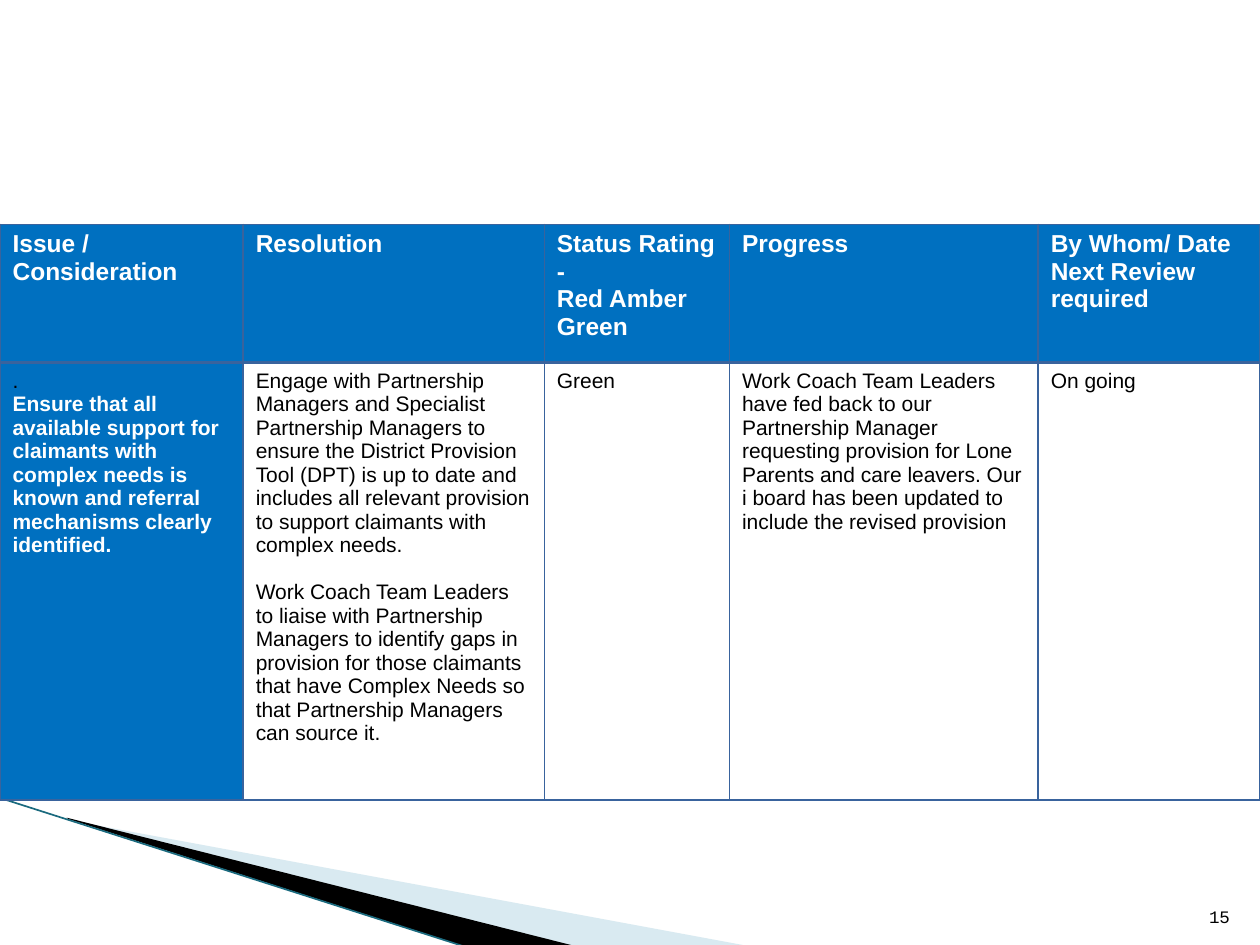
from dataclasses import dataclass

from lxml import etree
from pptx import Presentation
from pptx.dml.color import RGBColor
from pptx.enum.shapes import MSO_CONNECTOR
from pptx.enum.text import MSO_ANCHOR, PP_ALIGN
from pptx.oxml.ns import qn
from pptx.util import Inches, Pt

STRAIGHT = MSO_CONNECTOR.STRAIGHT
BOTTOM = MSO_ANCHOR.BOTTOM
RIGHT = PP_ALIGN.RIGHT


@dataclass(frozen=True)
class Theme:
    blue: str = "0070C0"
    border: str = "39639D"
    pale: str = "A0CBDC"
    teal: str = "1A6A7E"
    black: str = "000000"
    white: str = "FFFFFF"
    font: str = "Arial"
    number_font: str = "Courier New"
    header_size: float = 14
    body_size: float = 12
    number_size: float = 10
    paragraph_gap: float = 13.4


class SlideBuilder:
    def __init__(self, slide, theme):
        self.slide = slide
        self.theme = theme

    def add_run(self, paragraph, text, size, color, bold=False, font=None):
        run = paragraph.add_run()
        run.text = text
        run.font.name = font or self.theme.font
        run.font.size = Pt(size)
        run.font.bold = bold
        run.font.color.rgb = RGBColor.from_string(color)

    def add_wedge(self, points, color, opacity=None):
        corners = [(Inches(x), Inches(y)) for x, y in points]
        builder = self.slide.shapes.build_freeform(*corners[0], scale=1.0)
        builder.add_line_segments(corners[1:], close=True)
        wedge = builder.convert_to_shape()
        wedge.shadow.inherit = False
        wedge.line.fill.background()
        wedge.fill.solid()
        wedge.fill.fore_color.rgb = RGBColor.from_string(color)
        if opacity is not None:
            fill_color = wedge.fill._xPr.find(qn("a:solidFill"))[0]
            etree.SubElement(fill_color, qn("a:alpha"), val=str(opacity * 1000))

    def add_line(self, start, end, color, width):
        edge = self.slide.shapes.add_connector(
            STRAIGHT, *(Inches(value) for value in (*start, *end)))
        edge.line.color.rgb = RGBColor.from_string(color)
        edge.line.width = Pt(width)
        etree.SubElement(edge._element.spPr, qn("a:effectLst"))

    def add_page_number(self, text, left, top, width, height):
        box = self.slide.shapes.add_textbox(
            Inches(left), Inches(top), Inches(width), Inches(height))
        frame = box.text_frame
        frame.word_wrap = True
        frame.vertical_anchor = BOTTOM
        paragraph = frame.paragraphs[0]
        paragraph.alignment = RIGHT
        self.add_run(paragraph, text, self.theme.number_size,
                     self.theme.black, font=self.theme.number_font)

    def add_borders(self, cell, widths):
        properties = cell._tc.get_or_add_tcPr()
        for side, width in widths.items():
            line = etree.SubElement(properties, qn(f"a:ln{side}"), w=str(Pt(width)))
            fill = etree.SubElement(line, qn("a:solidFill"))
            etree.SubElement(fill, qn("a:srgbClr"), val=self.theme.border)

    def fill_cell(self, cell, paragraphs, size, color, bold, fill, borders):
        self.add_borders(cell, borders)
        if fill:
            cell.fill.solid()
            cell.fill.fore_color.rgb = RGBColor.from_string(fill)
        else:
            cell.fill.background()
        frame = cell.text_frame
        for index, text in enumerate(paragraphs):
            paragraph = frame.add_paragraph() if index else frame.paragraphs[0]
            if index:
                paragraph.space_before = Pt(self.theme.paragraph_gap)
            for number, line in enumerate(text.split("\n")):
                if number:
                    paragraph.add_line_break()
                self.add_run(paragraph, line, size, color, bold)

    def add_action_table(self, left, top, widths, heights, headings, actions):
        theme = self.theme
        table = self.slide.shapes.add_table(
            len(heights), len(widths), Inches(left), Inches(top),
            Inches(sum(widths)), Inches(sum(heights))).table
        table.first_row = False
        table.horz_banding = False
        for column, width in zip(table.columns, widths):
            column.width = Inches(width)
        for row, height in zip(table.rows, heights):
            row.height = Inches(height)
        for column, heading in enumerate(headings):
            self.fill_cell(table.cell(0, column), [heading], theme.header_size,
                           theme.white, True, theme.blue,
                           {"L": 1, "R": 1, "T": 1, "B": 2})
        for column, paragraphs in enumerate(actions):
            self.fill_cell(table.cell(1, column), paragraphs, theme.body_size,
                           theme.black, False, None if column else theme.blue,
                           {"L": 1, "R": 1, "T": 2, "B": 1})
        return table


def main():
    deck = Presentation()
    deck.slide_width = Inches(10)
    deck.slide_height = Inches(7.5)
    theme = Theme()
    page = SlideBuilder(deck.slides.add_slide(deck.slide_layouts[6]), theme)

    page.add_wedge([(0.55, 6.51), (5.95, 7.51), (4.56, 7.51), (0.55, 6.5)],
                   theme.pale, opacity=40)
    page.add_wedge([(0.53, 6.49), (4.57, 7.51), (3.72, 7.52), (0.54, 6.5)],
                   theme.black)
    page.add_line((-0.01, 6.33), (3.71, 7.52), theme.teal, 0.95)

    headings = ["Issue / Consideration", "Resolution",
                "Status Rating -\nRed Amber Green", "Progress",
                "By Whom/ Date Next Review required"]
    issue = ("Ensure that all available support for claimants with complex "
             "needs is known and referral mechanisms clearly identified.")
    resolution = [
        "Engage with Partnership Managers and Specialist Partnership Managers "
        "to ensure the District Provision Tool (DPT) is up to date and includes "
        "all relevant provision to support claimants with complex needs.",
        "Work Coach Team Leaders to liaise with Partnership Managers to identify "
        "gaps in provision for those claimants that have Complex Needs so that "
        "Partnership Managers can source it.",
    ]
    progress = ("Work Coach Team Leaders have fed back to our Partnership Manager "
                "requesting provision for Lone Parents and care leavers. Our i board "
                "has been updated to include the revised provision")
    action_table = page.add_action_table(
        0, 1.78, [1.93, 2.39, 1.47, 2.45, 1.76], [1.1, 3.47], headings,
        [["."], resolution, ["Green"], [progress], ["On going"]])
    issue_paragraph = action_table.cell(1, 0).text_frame.add_paragraph()
    page.add_run(issue_paragraph, issue, theme.body_size, theme.white, bold=True)

    page.add_page_number("15", 9.46, 7.01, 0.4, 0.4)
    deck.save("out.pptx")


if __name__ == "__main__":
    main()
